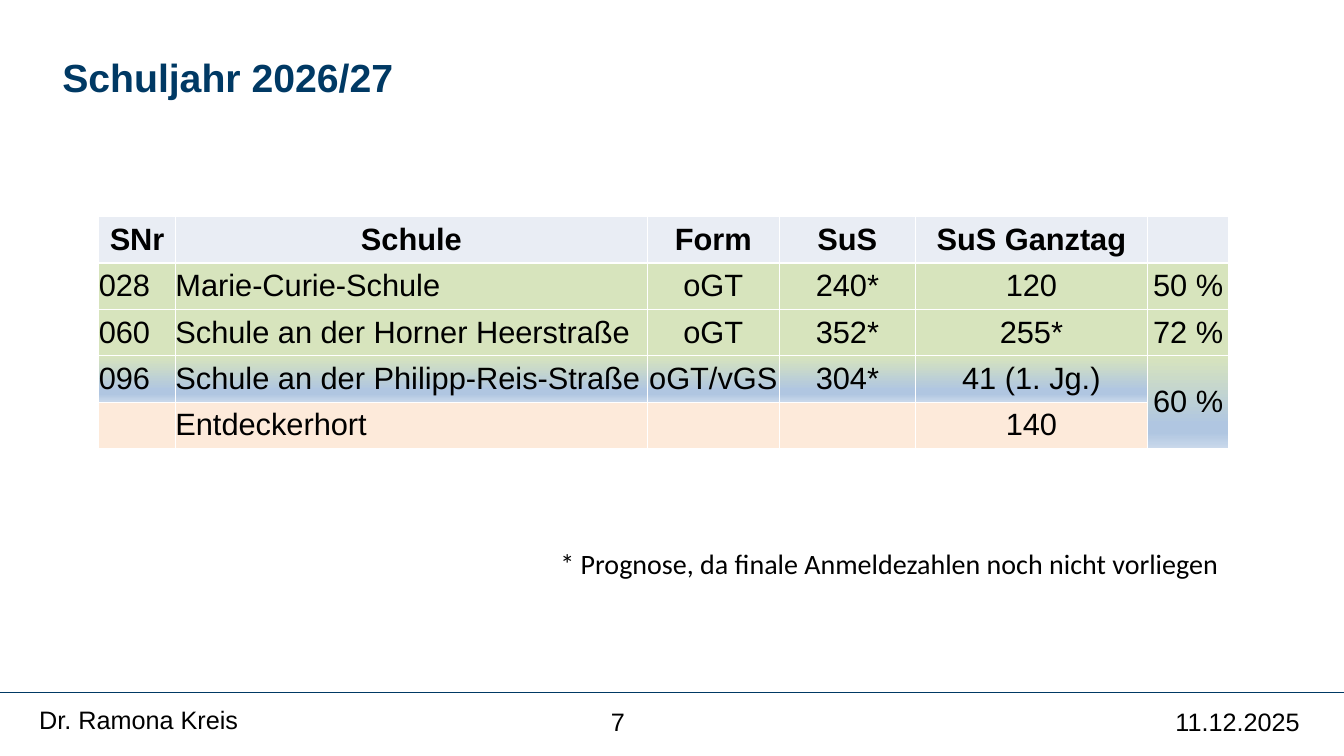
from lxml.etree import SubElement
from pptx import Presentation
from pptx.dml.color import RGBColor
from pptx.enum.shapes import MSO_CONNECTOR
from pptx.enum.text import MSO_ANCHOR, PP_ALIGN
from pptx.oxml.ns import qn
from pptx.util import Inches, Pt

COLORS = {
    "navy": "003964",
    "black": "000000",
    "white": "FFFFFF",
    "header": "E9EDF4",
    "green": "D7E4BD",
    "blue": "B0C6E1",
    "light_blue": "CAD9EB",
    "peach": "FDEADA",
}
GRADIENT = [(0, "green"), (74, "blue"), (83, "blue"), (100, "light_blue")]
COLUMN_WIDTHS = [0.76, 4.68, 1.31, 1.35, 2.3, 0.81]
ROW_HEIGHT = 0.46
ROWS = [
    ("header", ["SNr", "Schule", "Form", "SuS", "SuS Ganztag", ""]),
    ("green", ["028", "Marie-Curie-Schule", "oGT", "240*", "120", "50 %"]),
    ("green", ["060", "Schule an der Horner Heerstraße", "oGT", "352*", "255*", "72 %"]),
    ("gradient", ["096", "Schule an der Philipp-Reis-Straße", "oGT/vGS", "304*", "41 (1. Jg.)", "60 %"]),
    ("peach", ["", "Entdeckerhort", "", "", "140", ""]),
]


def rgb(name):
    return RGBColor.from_string(COLORS[name])


def write_text(text_frame, text, size=18, font="Arial", color="black", bold=False, align=PP_ALIGN.LEFT):
    paragraph = text_frame.paragraphs[0]
    paragraph.text = text
    paragraph.alignment = align
    paragraph.font.size = Pt(size)
    paragraph.font.name = font
    paragraph.font.bold = bold
    paragraph.font.color.rgb = rgb(color)


def add_text(slide, left, top, width, height, text, wrap=True, **text_format):
    box = slide.shapes.add_textbox(Inches(left), Inches(top), Inches(width), Inches(height))
    box.text_frame.word_wrap = wrap
    write_text(box.text_frame, text, **text_format)


def add_footer_line(slide):
    line = slide.shapes.add_connector(
        MSO_CONNECTOR.STRAIGHT, Inches(0), Inches(6.87), Inches(13.33), Inches(6.87)
    )
    line.line.color.rgb = rgb("navy")
    line.line.width = Pt(1)
    SubElement(line._element.spPr, qn("a:effectLst"))


def add_color(parent, name):
    SubElement(parent, qn("a:srgbClr"), val=COLORS[name])


def set_borders(cell):
    properties = cell._tc.get_or_add_tcPr()
    for side in ("lnL", "lnR", "lnT", "lnB"):
        border = SubElement(properties, qn(f"a:{side}"), w=str(Pt(1)))
        add_color(SubElement(border, qn("a:solidFill")), "white")


def set_fill(cell, fill):
    if fill != "gradient":
        cell.fill.solid()
        cell.fill.fore_color.rgb = rgb(fill)
        return
    gradient = SubElement(cell._tc.get_or_add_tcPr(), qn("a:gradFill"), rotWithShape="1")
    stops = SubElement(gradient, qn("a:gsLst"))
    for position, color in GRADIENT:
        add_color(SubElement(stops, qn("a:gs"), pos=str(position * 1000)), color)
    SubElement(gradient, qn("a:lin"), ang="5400000", scaled="0")


def format_cell(cell, text, fill, **text_format):
    cell.margin_left = cell.margin_right = cell.margin_top = cell.margin_bottom = 0
    cell.vertical_anchor = MSO_ANCHOR.MIDDLE
    set_borders(cell)
    set_fill(cell, fill)
    write_text(cell.text_frame, text, size=22, **text_format)


def add_school_table(slide):
    table = slide.shapes.add_table(
        len(ROWS), len(COLUMN_WIDTHS), Inches(0.98), Inches(2.15),
        Inches(sum(COLUMN_WIDTHS)), Inches(ROW_HEIGHT * len(ROWS)),
    ).table
    for column, width in zip(table.columns, COLUMN_WIDTHS):
        column.width = Inches(width)
    for row_index, (fill, texts) in enumerate(ROWS):
        table.rows[row_index].height = Inches(ROW_HEIGHT)
        is_header = row_index == 0
        for column_index, text in enumerate(texts):
            centered = is_header or column_index > 1
            format_cell(
                table.cell(row_index, column_index), text, fill, bold=is_header,
                align=PP_ALIGN.CENTER if centered else PP_ALIGN.LEFT,
            )
    table.cell(3, 5).merge(table.cell(4, 5))


def main():
    presentation = Presentation()
    presentation.slide_width = Inches(13.33)
    presentation.slide_height = Inches(7.5)
    slide = presentation.slides.add_slide(presentation.slide_layouts[6])
    add_footer_line(slide)
    add_text(slide, 11.56, 6.96, 1.6, 0.44, "11.12.2025")
    add_text(slide, 5.96, 6.96, 0.69, 0.4, "7")
    add_text(slide, 0.29, 6.94, 3.08, 0.44, "Dr. Ramona Kreis")
    add_school_table(slide)
    add_text(slide, 0.52, 0.48, 8.23, 0.61, "Schuljahr 2026/27", size=28, color="navy", bold=True)
    add_text(
        slide, 5.46, 5.37, 6.73, 0.44, "* Prognose, da finale Anmeldezahlen noch nicht vorliegen",
        wrap=False, size=20, font="Calibri",
    )
    presentation.save("out.pptx")


if __name__ == "__main__":
    main()
